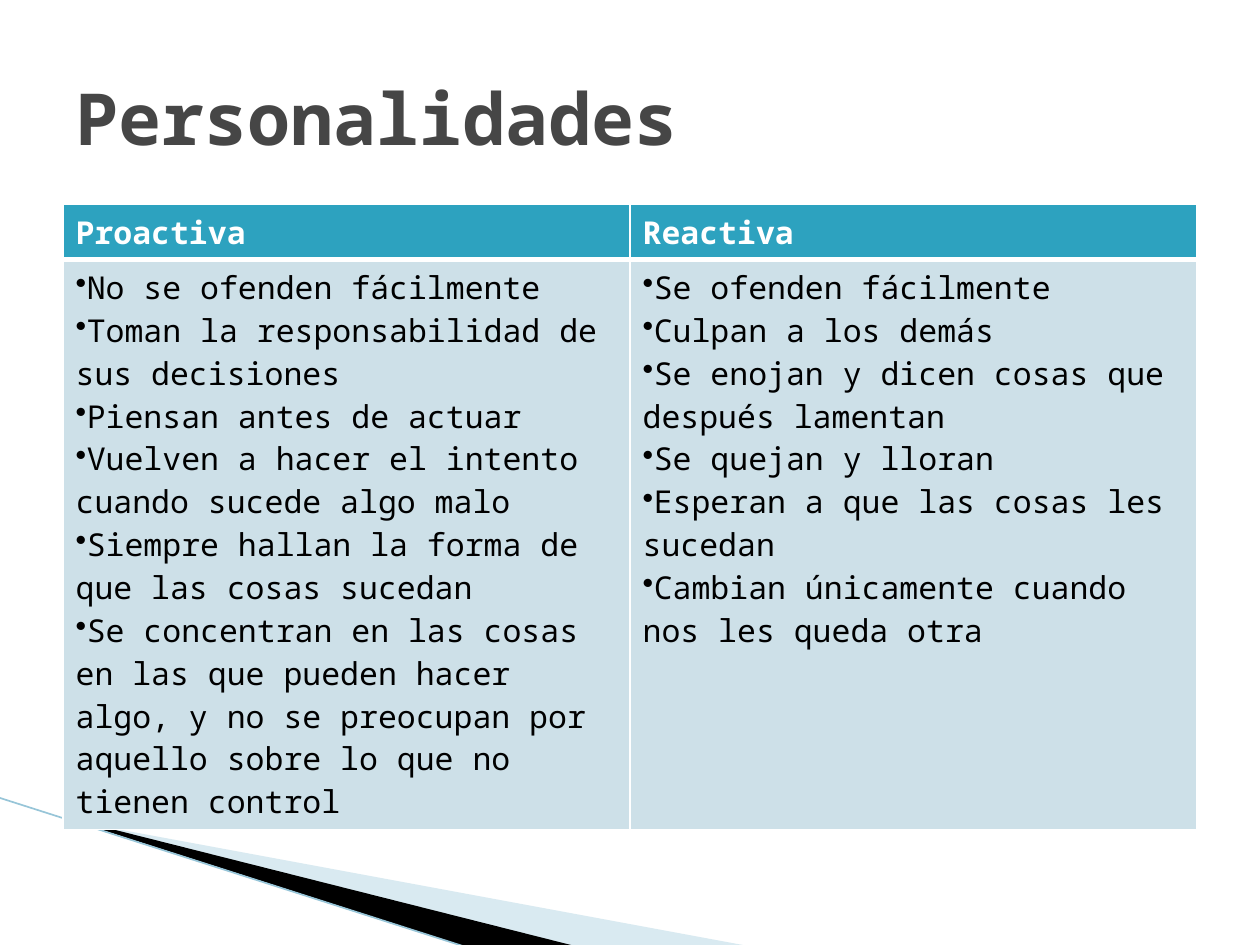
from lxml import etree
from pptx import Presentation
from pptx import util as u
from pptx.dml.color import RGBColor
from pptx.enum import shapes, text
from pptx.oxml import ns

WHITE = RGBColor(0xFF, 0xFF, 0xFF)
BLACK = RGBColor(0, 0, 0)
GREY = RGBColor(0x46, 0x46, 0x46)
TEAL = RGBColor(0x2D, 0xA2, 0xBF)
PALE_TEAL = RGBColor(0xCD, 0xE0, 0xE8)
WEDGE_BLUE = RGBColor(0xA0, 0xCB, 0xDC)
LINE_BLUE = RGBColor(0x97, 0xC5, 0xD8)
FONT = "Noto Sans Mono"

PERSONALITIES = {
    "Proactiva": [
        "No se ofenden fácilmente",
        "Toman la responsabilidad de sus decisiones",
        "Piensan antes de actuar",
        "Vuelven a hacer el intento cuando sucede algo malo",
        "Siempre hallan la forma de que las cosas sucedan",
        "Se concentran en las cosas en las que pueden hacer algo, "
        "y no se preocupan por aquello sobre lo que no tienen control",
    ],
    "Reactiva": [
        "Se ofenden fácilmente",
        "Culpan a los demás",
        "Se enojan y dicen cosas que después lamentan",
        "Se quejan y lloran",
        "Esperan a que las cosas les sucedan",
        "Cambian únicamente cuando nos les queda otra",
    ],
}


def add_element(parent, tag, **attributes):
    return etree.SubElement(parent, ns.qn(tag), attributes)


def add_run(paragraph, content, size, color, bold=False):
    run = paragraph.add_run()
    run.text = content
    run.font.name = FONT
    run.font.size = u.Pt(size)
    run.font.bold = bold
    run.font.color.rgb = color


def add_wedge(slide, left, top, points, color, opacity=100):
    corners = [(u.Inches(left + x), u.Inches(top + y)) for x, y in points]
    builder = slide.shapes.build_freeform(*corners[0])
    builder.add_line_segments(corners[1:])
    shape = builder.convert_to_shape()
    shape.shadow.inherit = False
    shape.fill.solid()
    shape.fill.fore_color.rgb = color
    shape.line.fill.background()
    if opacity < 100:
        fill_color = shape.fill._xPr.find(".//" + ns.qn("a:srgbClr"))
        add_element(fill_color, "a:alpha", val=str(opacity * 1000))


def add_corner_decoration(slide, left, top):
    add_wedge(slide, left, top,
              [(0.56, 0.18), (5.96, 1.18), (4.57, 1.18), (0.56, 0.17)], WEDGE_BLUE, 40)
    add_wedge(slide, left, top,
              [(0.54, 0.16), (4.58, 1.18), (3.73, 1.19), (0.55, 0.17)], BLACK)
    line = slide.shapes.add_connector(
        shapes.MSO_CONNECTOR.STRAIGHT, u.Inches(left), u.Inches(top),
        u.Inches(left + 3.72), u.Inches(top + 1.19))
    line.line.color.rgb = LINE_BLUE
    line.line.width = u.Pt(0.95)
    add_element(line._element.spPr, "a:effectLst")


def style_cell(cell, color, top, bottom):
    properties = cell._tc.get_or_add_tcPr()
    for side, width in (("L", 1), ("R", 1), ("T", top), ("B", bottom)):
        border = add_element(properties, "a:ln" + side, w=str(u.Pt(width)))
        fill = add_element(border, "a:solidFill")
        add_element(fill, "a:srgbClr", val=str(WHITE))
    cell.fill.solid()
    cell.fill.fore_color.rgb = color


def add_bullets(frame, items):
    for index, item in enumerate(items):
        paragraph = frame.add_paragraph() if index else frame.paragraphs[0]
        add_element(paragraph._p.get_or_add_pPr(), "a:buChar", char="•")
        add_run(paragraph, item, 18, BLACK)


def add_comparison(slide, left, top, width, height, header_height=0.43):
    table = slide.shapes.add_table(
        2, len(PERSONALITIES), u.Inches(left), u.Inches(top),
        u.Inches(width), u.Inches(height)).table
    table.rows[0].height = u.Inches(header_height)
    table.rows[1].height = u.Inches(height - header_height)
    for column, (heading, traits) in enumerate(PERSONALITIES.items()):
        table.columns[column].width = u.Inches(width / len(PERSONALITIES))
        header, body = table.cell(0, column), table.cell(1, column)
        style_cell(header, TEAL, 1, 3)
        style_cell(body, PALE_TEAL, 3, 1)
        add_run(header.text_frame.paragraphs[0], heading, 18, WHITE, True)
        add_bullets(body.text_frame, traits)


def add_title(slide, left, top, width, height):
    box = slide.shapes.add_textbox(
        u.Inches(left), u.Inches(top), u.Inches(width), u.Inches(height))
    frame = box.text_frame
    frame.word_wrap = True
    frame.vertical_anchor = text.MSO_ANCHOR.MIDDLE
    add_run(frame.paragraphs[0], "Personalidades", 41, GREY, True)


def main():
    presentation = Presentation()
    presentation.slide_width = u.Inches(10)
    presentation.slide_height = u.Inches(7.5)
    slide = presentation.slides.add_slide(presentation.slide_layouts[6])
    add_corner_decoration(slide, -0.01, 6.33)
    add_comparison(slide, 0.5, 1.62, 9, 4.95)
    add_title(slide, 0.5, 0.3, 9, 1.25)
    presentation.save("out.pptx")


if __name__ == "__main__":
    main()
